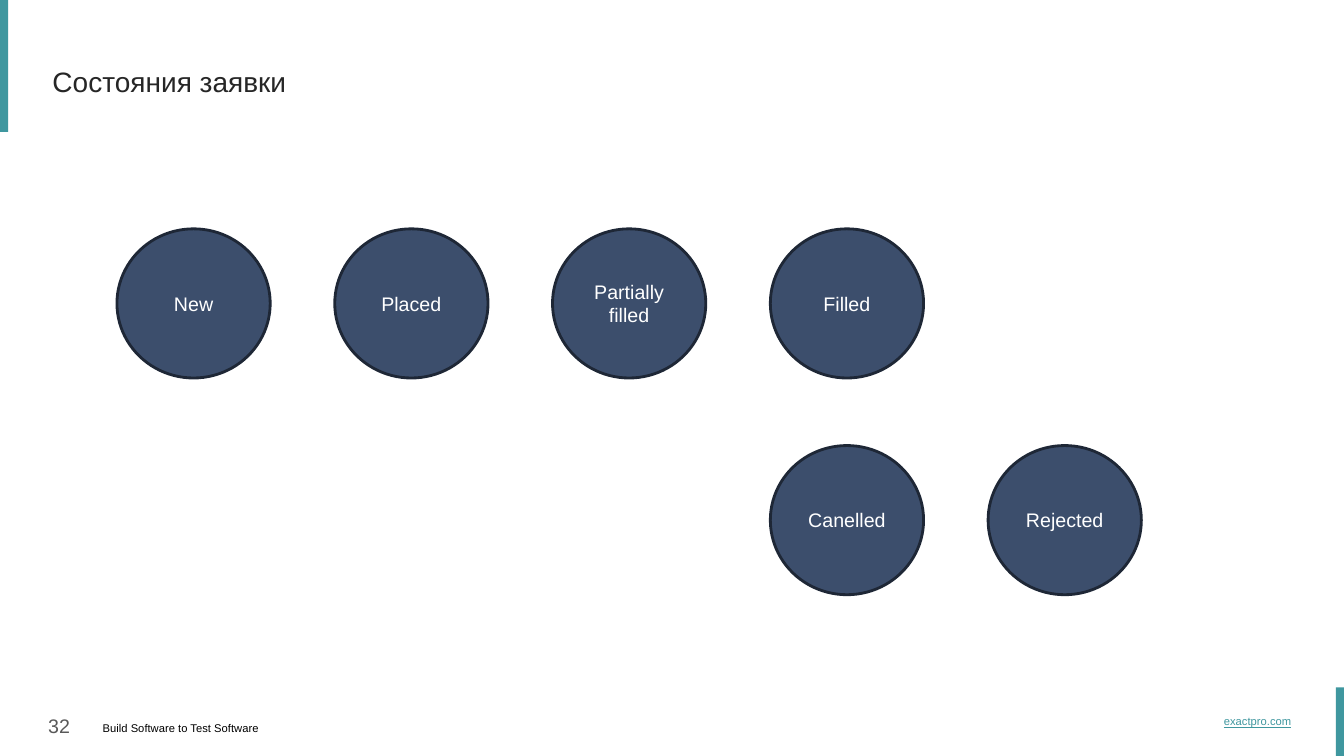
from dataclasses import dataclass

from pptx import Presentation
from pptx.dml.color import RGBColor as RGB
from pptx.enum.shapes import MSO_SHAPE as SHAPE
from pptx.enum.text import MSO_ANCHOR as ANCHOR, PP_ALIGN as ALIGN
from pptx.util import Inches, Pt

TITLE = "Состояния заявки"
# (label, column, row)
STATES = [
    ("New", 0, 0),
    ("Placed", 1, 0),
    ("Partially filled", 2, 0),
    ("Filled", 3, 0),
    ("Canelled", 3, 1),
    ("Rejected", 4, 1),
]
PAGE_NUMBER = "32"
TAGLINE = "Build Software to Test Software"
SITE = "exactpro.com"


@dataclass(frozen=True)
class Theme:
    font: str = "Arial"
    accent: str = "3F979F"
    title: str = "262626"
    state_fill: str = "3C4E6C"
    state_line: str = "1E2736"
    state_text: str = "FFFFFF"
    number: str = "595959"
    tagline: str = "000000"
    title_size: int = 20
    state_size: int = 14
    number_size: int = 14
    footer_size: int = 8


THEME = Theme()
ACCENT_BARS = [(0, 0, 0.08, 1.31), (13.25, 6.82, 0.08, 0.68)]
TITLE_BOX = (0.52, 0.3, 12, 1.01)
STATE_LEFT, STATE_TOP = 1.16, 2.27
STATE_W, STATE_H = 1.52, 1.48
COLUMN_STEP, ROW_STEP = 2.16, 2.15
# (text, box, size, colour, anchor, underline)
FOOTER = [
    (PAGE_NUMBER, (0.38, 7.03, 1.04, 0.4), THEME.number_size, THEME.number,
     ANCHOR.TOP, False),
    (TAGLINE, (0.92, 7.11, 2.31, 0.31), THEME.footer_size, THEME.tagline,
     ANCHOR.TOP, False),
    (SITE, (12.04, 7, 0.92, 0.31), THEME.footer_size, THEME.accent,
     ANCHOR.MIDDLE, True),
]


def inches(box):
    return [Inches(v) for v in box]


def write(sp, text, size, color, align=ALIGN.LEFT, anchor=ANCHOR.MIDDLE,
          underline=None, insets=(0.1, 0.05)):
    """Fill a shape with one formatted paragraph; insets are (side, top/bottom)."""
    tf = sp.text_frame
    side, edge = inches(insets)
    frame = {"word_wrap": True, "vertical_anchor": anchor,
             "margin_left": side, "margin_right": side,
             "margin_top": edge, "margin_bottom": edge}
    for name, value in frame.items():
        setattr(tf, name, value)
    p = tf.paragraphs[0]
    p.alignment = align
    r = p.add_run()
    r.text = text
    font = {"name": THEME.font, "size": Pt(size), "underline": underline}
    for name, value in font.items():
        setattr(r.font, name, value)
    r.font.color.rgb = RGB.from_string(color)


def add_filled(s, kind, box, fill, line=None):
    sp = s.shapes.add_shape(kind, *inches(box))
    sp.shadow.inherit = False
    sp.fill.solid()
    sp.fill.fore_color.rgb = RGB.from_string(fill)
    if line:
        sp.line.color.rgb = RGB.from_string(line)
        sp.line.width = Pt(2)
    else:
        sp.line.fill.background()
    return sp


def add_title(s):
    sp = s.shapes.title
    sp.left, sp.top, sp.width, sp.height = inches(TITLE_BOX)
    write(sp, TITLE, THEME.title_size, THEME.title, insets=(0, 0))


def add_states(s):
    for label, column, row in STATES:
        box = (STATE_LEFT + column * COLUMN_STEP, STATE_TOP + row * ROW_STEP,
               STATE_W, STATE_H)
        sp = add_filled(s, SHAPE.OVAL, box, THEME.state_fill, THEME.state_line)
        write(sp, label, THEME.state_size, THEME.state_text, ALIGN.CENTER)


def add_footer(s):
    for text, box, size, color, anchor, underline in FOOTER:
        sp = s.shapes.add_textbox(*inches(box))
        write(sp, text, size, color, anchor=anchor, underline=underline)


def main():
    prs = Presentation()
    prs.slide_width, prs.slide_height = Inches(13.33), Inches(7.5)
    s = prs.slides.add_slide(prs.slide_layouts[5])  # Title Only
    for box in ACCENT_BARS:
        add_filled(s, SHAPE.RECTANGLE, box, THEME.accent)
    add_title(s)
    add_states(s)
    add_footer(s)
    prs.save("out.pptx")


if __name__ == "__main__":
    main()
